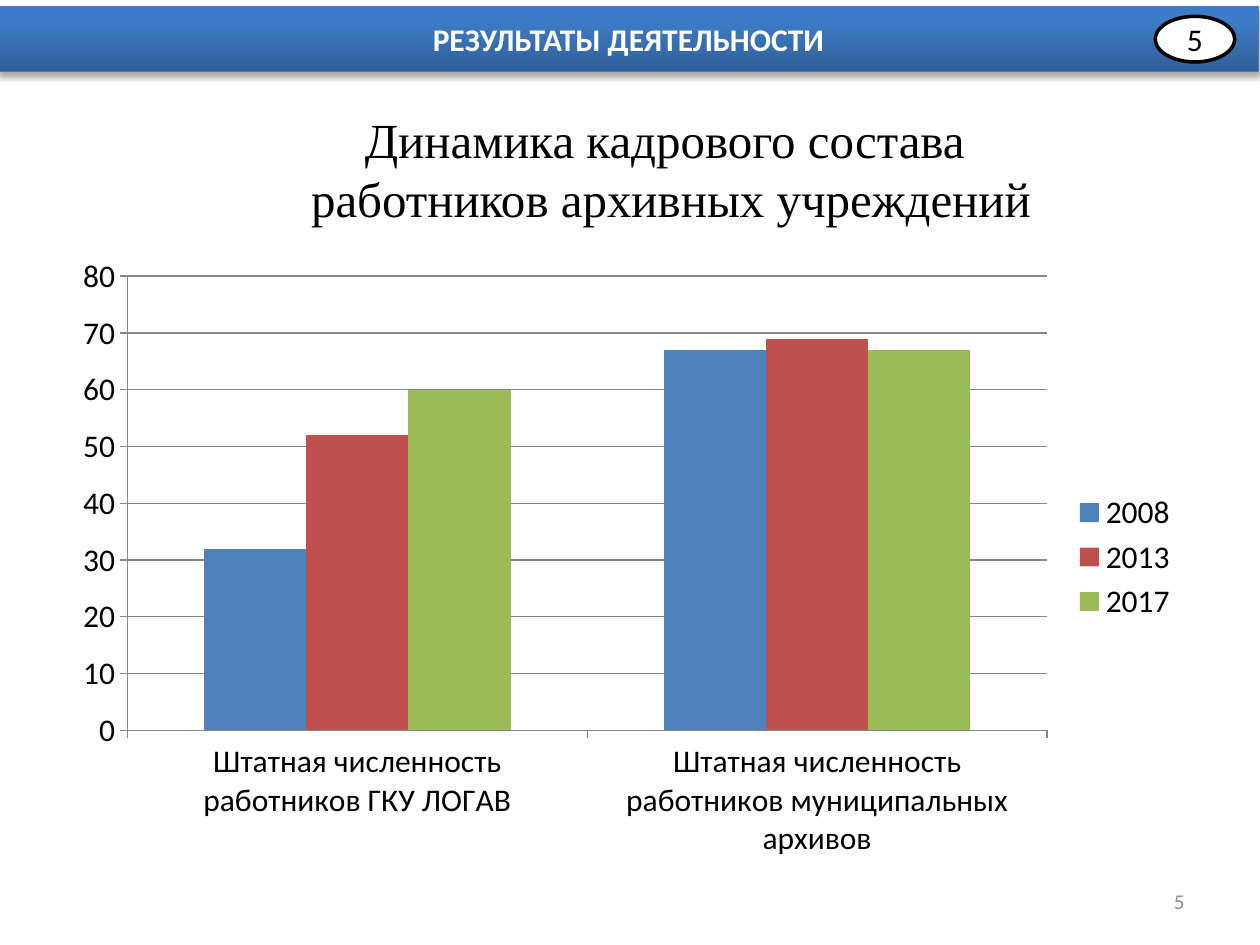
from copy import deepcopy

from lxml.etree import fromstring
from pptx import Presentation
from pptx.chart.data import CategoryChartData
from pptx.dml.color import RGBColor
from pptx.enum.chart import XL_CHART_TYPE as CT, XL_LEGEND_POSITION as LP, XL_TICK_MARK as TM
from pptx.enum.shapes import MSO_SHAPE as SHAPE
from pptx.enum.text import MSO_ANCHOR as ANCHOR, PP_ALIGN as AL
from pptx.util import Cm, Pt

SHADOW = (
    '<a:effectLst xmlns:a="http://schemas.openxmlformats.org/drawingml/2006/main">'
    '<a:outerShdw blurRad="40000" dist="23000" dir="5400000" rotWithShape="0">'
    '<a:srgbClr val="000000"><a:alpha val="35000"/></a:srgbClr>'
    '</a:outerShdw></a:effectLst>'
)


def rgb(value):
    return RGBColor.from_string(value)


class Deck:
    font = "Calibri"
    black = "000000"
    white = "FFFFFF"
    grey = "8C8C8C"

    def __init__(self, width, height):
        self.prs = Presentation()
        self.prs.slide_width, self.prs.slide_height = Cm(width), Cm(height)
        self.s = None

    def slide(self):
        self.s = self.prs.slides.add_slide(self.prs.slide_layouts[6])

    def label(self, sp, lines, size, color, align=AL.CENTER, font=None, bold=False, spacing=None):
        tf = sp.text_frame
        tf.word_wrap = True
        tf.vertical_anchor = ANCHOR.MIDDLE
        p = tf.paragraphs[0]
        p.alignment = align
        if spacing:
            p.line_spacing = Pt(spacing)
        for i, line in enumerate(lines):
            if i:
                p.add_line_break()
            r = p.add_run()
            r.text = line
            r.font.name = font or self.font
            r.font.size = Pt(size)
            r.font.bold = bold
            r.font.color.rgb = rgb(color)

    def text(self, box, lines, size, color, bottom=0.13, **style):
        sp = self.s.shapes.add_textbox(*map(Cm, box))
        sp.text_frame.margin_bottom = Cm(bottom)
        self.label(sp, lines, size, color, **style)

    def shape(self, parent, kind, box, line, width):
        sp = parent.shapes.add_shape(kind, *map(Cm, box))
        sp.shadow.inherit = False
        sp.line.color.rgb = rgb(line)
        sp.line.width = Pt(width)
        return sp

    def banner(self, parent, box, title, stops, line):
        sp = self.shape(parent, SHAPE.RECTANGLE, box, line, 0.75)
        sp.fill.gradient()
        sp.fill.gradient_angle = 90
        last = sp._element.spPr.xpath("a:gradFill/a:gsLst/a:gs")[-1]
        last.addprevious(deepcopy(last))
        for stop, (position, color) in zip(sp.fill.gradient_stops, stops):
            stop.position = position
            stop.color.rgb = rgb(color)
        effects = sp._element.spPr.xpath("a:effectLst")[0]
        effects.getparent().replace(effects, fromstring(SHADOW))
        self.label(sp, [title], 18, self.white, bold=True)

    def badge(self, parent, box, number):
        sp = self.shape(parent, SHAPE.OVAL, box, self.black, 2)
        sp.fill.solid()
        sp.fill.fore_color.rgb = rgb(self.white)
        tf = sp.text_frame
        tf.margin_left = tf.margin_right = tf.margin_top = tf.margin_bottom = 0
        self.label(sp, [number], 18, self.black)

    def columns(self, box, cats, series):
        data = CategoryChartData()
        data.categories = cats
        for name, values, _ in series:
            data.add_series(name, values)
        chart = self.s.shapes.add_chart(CT.COLUMN_CLUSTERED, *map(Cm, box), data).chart
        chart.has_title = False
        chart.font.name = self.font
        chart.font.size = Pt(18)
        chart.font.color.rgb = rgb(self.black)
        chart.has_legend = True
        chart.legend.position = LP.RIGHT
        chart.legend.include_in_layout = False
        plot = chart.plots[0]
        plot.gap_width = 150
        plot.overlap = 0
        plot.vary_by_categories = False
        for ser, (_, _, color) in zip(plot.series, series):
            ser.format.fill.solid()
            ser.format.fill.fore_color.rgb = rgb(color)
        axis = chart.value_axis
        axis.minimum_scale, axis.maximum_scale, axis.major_unit = 0, 80, 10
        axis.has_major_gridlines = True
        lines = [axis.major_gridlines.format.line]
        for ax in (axis, chart.category_axis):
            ax.major_tick_mark = TM.OUTSIDE
            ax.minor_tick_mark = TM.NONE
            lines.append(ax.format.line)
        for line in lines:
            line.color.rgb = rgb("868686")
            line.width = Pt(0.75)


def main():
    deck = Deck(25.4, 19.05)
    deck.slide()
    header = deck.s.shapes.add_group_shape()
    deck.banner(header, (-0.03, 0.13, 25.4, 1.32), "РЕЗУЛЬТАТЫ ДЕЯТЕЛЬНОСТИ",
                [(0, "2F5F99"), (0.8, "3D7CC7"), (1, "3A7CCB")], "4B7EBC")
    deck.badge(header, (23.29, 0.33, 1.6, 0.92), "5")
    deck.text((3.05, 1.93, 20.95, 3.99),
              ["Динамика кадрового состава ", "работников архивных учреждений"],
              28, deck.black, bottom=1.2, font="Times New Roman", spacing=34)
    deck.columns((1.22, 4.93, 22.78, 12.6),
                 ["Штатная численность работников ГКУ ЛОГАВ",
                  "Штатная численность работников муниципальных архивов"],
                 [("2008", (32, 67), "4F81BD"),
                  ("2013", (52, 69), "C0504D"),
                  ("2017", (60, 67), "9BBB59")])
    deck.text((18.21, 17.65, 5.92, 1.02), ["5"], 12, deck.grey, align=AL.RIGHT)
    deck.prs.save("out.pptx")


if __name__ == "__main__":
    main()
